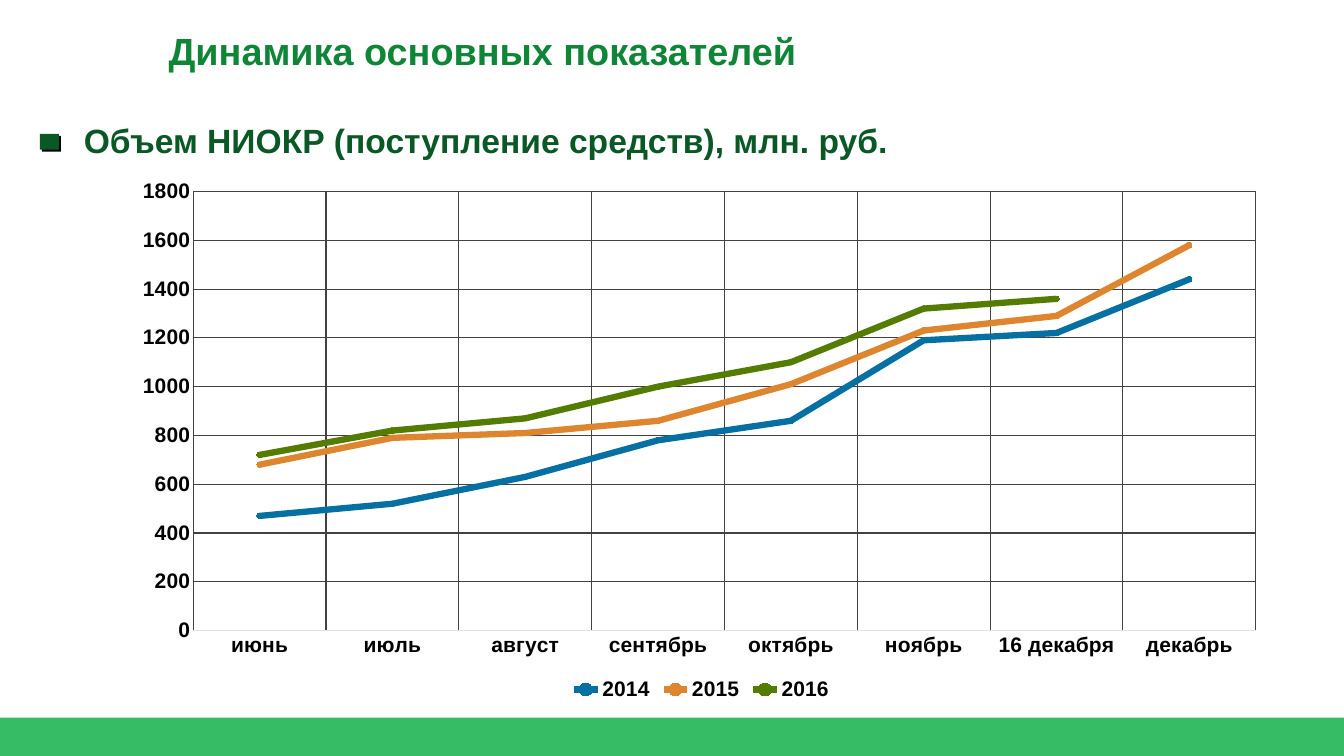
from lxml import etree
from pptx import Presentation
from pptx.chart.data import CategoryChartData
from pptx.dml.color import RGBColor
from pptx.enum.chart import XL_CHART_TYPE as ChartType, XL_LEGEND_POSITION as LegendPosition
from pptx.enum.chart import XL_MARKER_STYLE as MarkerStyle, XL_TICK_MARK as TickMark
from pptx.enum.shapes import MSO_SHAPE as Shape
from pptx.enum.text import MSO_ANCHOR as Anchor
from pptx.oxml import parse_xml
from pptx.oxml.ns import nsdecls, qn
from pptx.util import Pt

# Content
TITLE = "Динамика основных показателей"
SUBTITLE = "Объем НИОКР (поступление средств), млн. руб."
MONTHS = ["июнь", "июль", "август", "сентябрь", "октябрь", "ноябрь", "16 декабря", "декабрь"]

FONT = "Arial"
BLACK = RGBColor(0x00, 0x00, 0x00)
GRID_GRAY = RGBColor(0x42, 0x42, 0x42)
AXIS_GRAY = RGBColor(0xE3, 0xE3, 0xE3)
BAND_GREEN = RGBColor(0x13, 0xB1, 0x4A)
TITLE_GREEN = RGBColor(0x0E, 0x85, 0x37)
DARK_GREEN = RGBColor(0x09, 0x58, 0x25)
BLUE = RGBColor(0x05, 0x70, 0xA1)
ORANGE = RGBColor(0xDE, 0x86, 0x2F)
OLIVE = RGBColor(0x53, 0x7C, 0x00)

# Year, values, line colour, marker colour
YEARS = [
    ("2014", [470, 520, 630, 780, 860, 1190, 1220, 1440], BLUE, BAND_GREEN),
    ("2015", [680, 790, 810, 860, 1010, 1230, 1290, 1580], ORANGE, ORANGE),
    ("2016", [720, 820, 870, 1000, 1100, 1320, 1360, None], OLIVE, DARK_GREEN),
]

# Geometry in points: left, top, width, height
SLIDE_WIDTH, SLIDE_HEIGHT = 1280, 720
BAND_HEIGHT = 36.5
BULLET_BOX = (38, 127.5, 18, 15)
TITLE_BOX = (153.5, 8, 1116, 80)
SUBTITLE_BOX = (72.7, 111, 852, 46)
CHART_BOX = (118, 162, 1100, 510)
PLOT_LAYOUT = {"x": 0.06, "y": 0.04, "w": 0.92, "h": 0.82}


def style_font(font, size, color):
    font.name, font.size, font.bold = FONT, Pt(size), True
    font.color.rgb = color


def add_rectangle(slide, box, color):
    shape = slide.shapes.add_shape(Shape.RECTANGLE, *map(Pt, box))
    shape.shadow.inherit = False
    shape.fill.solid()
    shape.fill.fore_color.rgb = color
    shape.line.fill.background()
    return shape


def add_heading(slide, box, text, size, color, anchor):
    frame = slide.shapes.add_textbox(*map(Pt, box)).text_frame
    frame.word_wrap = True
    frame.vertical_anchor = anchor
    run = frame.paragraphs[0].add_run()
    run.text = text
    style_font(run.font, size, color)


def style_axis(axis):
    axis.major_tick_mark = axis.minor_tick_mark = TickMark.NONE
    axis.has_major_gridlines = True
    grid = axis.major_gridlines.format.line
    grid.color.rgb, grid.width = GRID_GRAY, Pt(1)
    style_font(axis.tick_labels.font, 20, BLACK)


def set_plot_layout(chart):
    plot_area = chart.plots[0]._element.getparent()
    for old in plot_area.findall(qn("c:layout")):
        plot_area.remove(old)
    layout = parse_xml(f"<c:layout {nsdecls('c')}><c:manualLayout/></c:layout>")
    settings = {"layoutTarget": "inner", "xMode": "edge", "yMode": "edge", **PLOT_LAYOUT}
    for name, value in settings.items():
        etree.SubElement(layout[0], qn(f"c:{name}")).set("val", str(value))
    plot_area.insert(0, layout)


def add_line_chart(slide):
    data = CategoryChartData()
    data.categories = MONTHS
    for year, values, _, _ in YEARS:
        data.add_series(year, values)
    chart = slide.shapes.add_chart(ChartType.LINE_MARKERS, *map(Pt, CHART_BOX), data).chart
    style_font(chart.font, 20, BLACK)
    chart.has_title = False
    chart.has_legend = True
    chart.legend.position = LegendPosition.BOTTOM
    chart.legend.include_in_layout = False
    style_font(chart.legend.font, 20, BLACK)
    chart.plots[0].vary_by_categories = False

    style_axis(chart.category_axis)
    axis_line = chart.category_axis.format.line
    axis_line.color.rgb, axis_line.width = AXIS_GRAY, Pt(0.75)
    value_axis = chart.value_axis
    style_axis(value_axis)
    value_axis.format.line.fill.background()
    value_axis.minimum_scale, value_axis.maximum_scale = 0, 1800
    value_axis.major_unit = 200

    for series, (_, _, line_color, marker_color) in zip(chart.plots[0].series, YEARS):
        series.smooth = False
        series.format.line.color.rgb = line_color
        series.format.line.width = Pt(6)
        marker = series.marker
        marker.style, marker.size = MarkerStyle.CIRCLE, 5
        marker.format.fill.solid()
        marker.format.fill.fore_color.rgb = marker_color
        marker.format.line.color.rgb = line_color
    set_plot_layout(chart)


def main():
    presentation = Presentation()
    presentation.slide_width, presentation.slide_height = Pt(SLIDE_WIDTH), Pt(SLIDE_HEIGHT)
    slide = presentation.slides.add_slide(presentation.slide_layouts[6])

    # Translucent band along the bottom edge
    band_box = (0, SLIDE_HEIGHT - BAND_HEIGHT, SLIDE_WIDTH, BAND_HEIGHT)
    band = add_rectangle(slide, band_box, BAND_GREEN)
    band_color = band._element.spPr.find(qn("a:solidFill"))[0]
    etree.SubElement(band_color, qn("a:alpha")).set("val", "85000")

    # Square bullet with a hard shadow
    bullet = add_rectangle(slide, BULLET_BOX, DARK_GREEN)
    bullet._element.spPr.find(qn("a:effectLst")).append(parse_xml(
        f'<a:outerShdw {nsdecls("a")} blurRad="0" dist="{Pt(2.8)}" dir="2700000" algn="ctr" '
        'rotWithShape="0"><a:srgbClr val="000000"/></a:outerShdw>'))

    # Headings and chart
    add_heading(slide, SUBTITLE_BOX, SUBTITLE, 32, DARK_GREEN, Anchor.TOP)
    add_heading(slide, TITLE_BOX, TITLE, 36, TITLE_GREEN, Anchor.MIDDLE)
    add_line_chart(slide)
    presentation.save("out.pptx")


if __name__ == "__main__":
    main()
